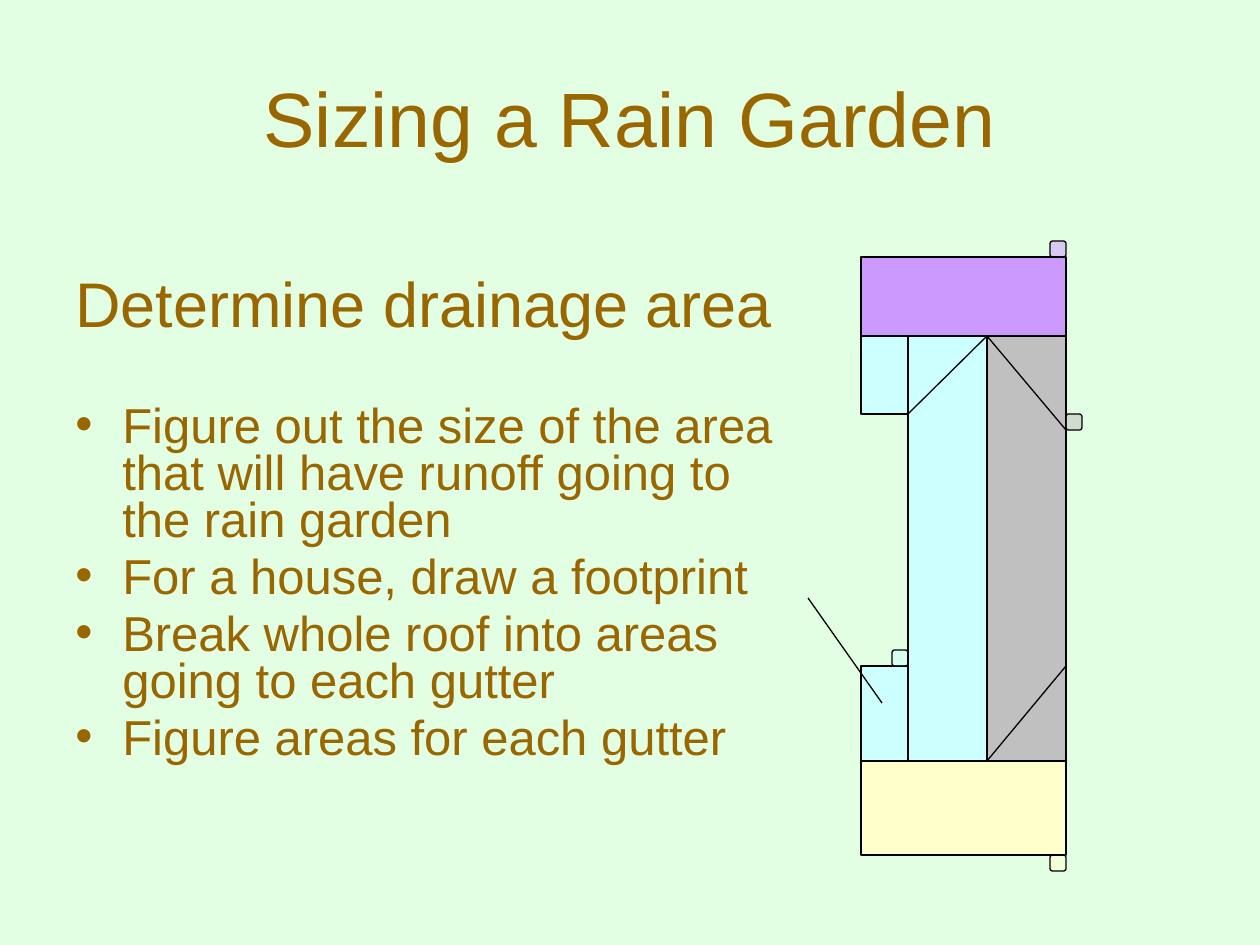
"""Builds the rain garden sizing slide with its roof drainage plan."""
import dataclasses

import lxml.etree
import pptx
import pptx.dml.color
import pptx.enum.shapes
import pptx.enum.text
import pptx.oxml.ns
import pptx.util

PX = 914400 / 126
SHAPES = pptx.enum.shapes.MSO_SHAPE
ALIGN = pptx.enum.text.PP_ALIGN
ANCHOR = pptx.enum.text.MSO_ANCHOR


@dataclasses.dataclass(frozen=True)
class Theme:
    background: str = "E3FFE3"
    text: str = "996600"
    outline: str = "000000"
    purple: str = "CC99FF"
    cyan: str = "CCFFFF"
    gray: str = "C0C0C0"
    yellow: str = "FFFFCC"
    font: str = "Arial"
    title_size: int = 44
    heading_size: int = 36
    bullet_size: int = 28
    line_width: float = 0.75


def emu(pixels):
    return round(pixels * PX)


def rgb(value):
    return pptx.dml.color.RGBColor.from_string(value)


def add_element(parent, tag, **attributes):
    name = pptx.oxml.ns.qn(tag)
    return lxml.etree.SubElement(parent, name, attributes)


def write(paragraph, text, *, font, size, color, align=ALIGN.LEFT, bullet=None,
          indent=0, line_spacing=None, space_before=0):
    properties = paragraph._p.get_or_add_pPr()
    properties.set("marL", str(emu(indent)))
    properties.set("indent", str(-emu(indent)))
    if bullet:
        add_element(properties, "a:buFont", typeface=font)
        add_element(properties, "a:buChar", char=bullet)
    else:
        add_element(properties, "a:buNone")
    paragraph.alignment = align
    paragraph.line_spacing = line_spacing
    paragraph.space_before = pptx.util.Pt(space_before)
    run = paragraph.add_run()
    run.text = text
    run.font.name = font
    run.font.size = pptx.util.Pt(size)
    run.font.color.rgb = rgb(color)


class SlideBuilder:
    def __init__(self, presentation, theme):
        self.theme = theme
        self.slide = presentation.slides.add_slide(presentation.slide_layouts[5])
        fill = self.slide.background.fill
        fill.solid()
        fill.fore_color.rgb = rgb(theme.background)

    def title(self, text, left, top, width, height):
        shape = self.slide.shapes.title
        shape.left, shape.top = emu(left), emu(top)
        shape.width, shape.height = emu(width), emu(height)
        shape.text_frame.vertical_anchor = ANCHOR.MIDDLE
        write(shape.text_frame.paragraphs[0], text, font=self.theme.font,
              size=self.theme.title_size, color=self.theme.text, align=ALIGN.CENTER)

    def body(self, heading, bullets, left, top, width, height):
        shape = self.slide.shapes.add_textbox(emu(left), emu(top), emu(width), emu(height))
        frame = shape.text_frame
        frame.word_wrap = True
        style = dict(font=self.theme.font, color=self.theme.text, indent=47, line_spacing=0.8)
        write(frame.paragraphs[0], heading, size=self.theme.heading_size, **style)
        for index, text in enumerate(bullets):
            write(frame.add_paragraph(), text, size=self.theme.bullet_size, bullet="•",
                  space_before=5.6 if index else 38, **style)

    def block(self, color, left, top, right, bottom, kind=SHAPES.RECTANGLE, opacity=100):
        shape = self.slide.shapes.add_shape(
            kind, emu(left), emu(top), emu(right - left), emu(bottom - top))
        shape.shadow.inherit = False
        shape.fill.solid()
        shape.fill.fore_color.rgb = rgb(color)
        if opacity < 100:
            fill_color = shape._element.spPr.find(".//" + pptx.oxml.ns.qn("a:srgbClr"))
            add_element(fill_color, "a:alpha", val=str(opacity * 1000))
        self.outline(shape)

    def gutter(self, color, left, top, opacity):
        self.block(color, left, top, left + 16, top + 16, SHAPES.ROUNDED_RECTANGLE, opacity)

    def line(self, start, end):
        connector = self.slide.shapes.add_connector(
            pptx.enum.shapes.MSO_CONNECTOR.STRAIGHT, *map(emu, start + end))
        self.outline(connector)
        add_element(connector._element.spPr, "a:effectLst")

    def outline(self, shape):
        shape.line.color.rgb = rgb(self.theme.outline)
        shape.line.width = pptx.util.Pt(self.theme.line_width)


def draw_roof(builder):
    theme = builder.theme
    west, inner, ridge, east = 861, 908, 987, 1066
    north, upper, upper_wing, lower_wing, lower, south = 257, 336, 414, 666, 761, 855

    builder.block(theme.cyan, west, lower_wing, east, lower)
    builder.gutter(theme.purple, east - 16, north - 16, 52)
    builder.gutter(theme.yellow, east - 16, south, 60)
    builder.gutter(theme.cyan, inner - 16, lower_wing - 16, 50)
    builder.block(theme.purple, west, north, east, upper)
    builder.block(theme.cyan, west, upper, east, upper_wing)
    builder.block(theme.gray, ridge, upper, east, lower)
    builder.block(theme.cyan, inner, upper, ridge, lower)
    builder.block(theme.yellow, west, lower, east, south)
    builder.gutter(theme.gray, east, upper_wing, 54)

    builder.line((ridge, upper), (inner, upper_wing))
    builder.line((ridge, upper), (east, upper_wing + 16))
    builder.line((east, lower_wing), (ridge, lower))
    builder.line((808, 598), (882, 703))


def main():
    presentation = pptx.Presentation()
    presentation.slide_width = emu(1260)
    presentation.slide_height = emu(945)
    builder = SlideBuilder(presentation, Theme())
    builder.title("Sizing a Rain Garden", 63, 38, 1134, 157)
    builder.body("Determine drainage area", [
        "Figure out the size of the area that will have runoff going to the rain garden",
        "For a house, draw a footprint",
        "Break whole roof into areas going to each gutter",
        "Figure areas for each gutter",
    ], 63, 273, 746, 546)
    draw_roof(builder)
    presentation.save("out.pptx")


if __name__ == "__main__":
    main()
